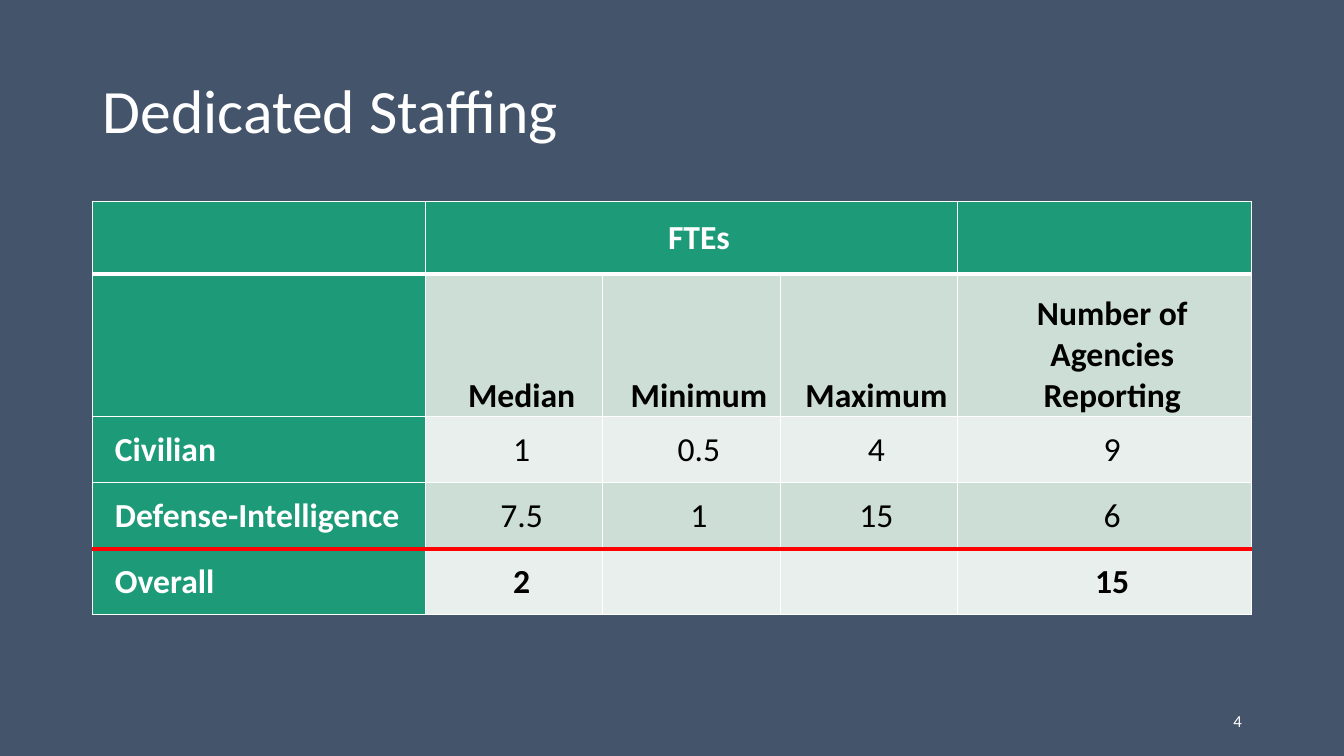
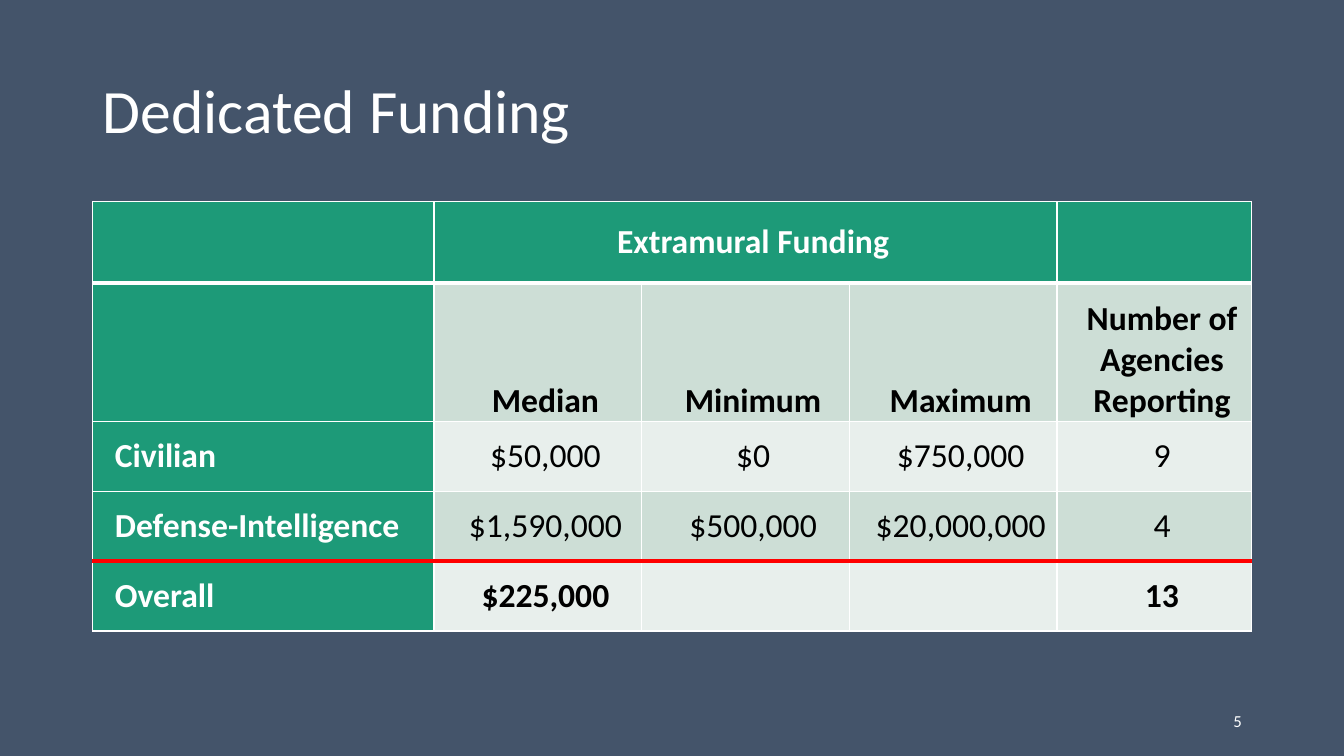
from pptx import Presentation
from pptx.dml.color import RGBColor
from pptx.enum.text import MSO_ANCHOR as Anchor, PP_ALIGN as Align
from pptx.oxml.ns import qn
from pptx.util import Inches, Pt
from lxml.etree import SubElement

FONT = "Calibri"
NAVY, GREEN, RED = "44546A", "1D9A78", "FF0000"
WHITE, BLACK = "FFFFFF", "000000"
BANDS = ["CDDED6", "E8EFEC"]

deck = Presentation()
deck.slide_width, deck.slide_height = Inches(13.33), Inches(7.5)
column, row = deck.slide_width / 100, deck.slide_height / 75
left, width = int(6.9 * column), int(86.25 * column)


def paint(target, color):
    if hasattr(target, "solid"):
        target.solid()
        target = target.fore_color
    else:
        target = target.color
    target.rgb = RGBColor.from_string(color)


def write(para, text, size, color, bold=False, align=Align.LEFT):
    para.alignment = align
    span = para.add_run()
    span.text = text
    span.font.name, span.font.size, span.font.bold = FONT, Pt(size), bold
    paint(span.font, color)


paint(deck.slide_master.background.fill, NAVY)
layout = deck.slide_layouts.get_by_name("Title Only")
title = layout.placeholders[0]
title.left, title.top = left, int(4 * row)
title.width, title.height = width, int(14.5 * row)
title.text_frame.vertical_anchor = Anchor.MIDDLE

labels = ["", "Median", "Minimum", "Maximum", "Number of\nAgencies\nReporting"]
pages = [
    {
        "title": "Dedicated Staffing",
        "number": "4",
        "columns": [24.75, 13.2, 13.2, 13.2, 21.9],
        "rows": [7.15, 14.2, 6.55, 6.55, 6.55],
        "cells": [
            ["", "FTEs", "", "", ""],
            labels,
            ["Civilian", "1", "0.5", "4", "9"],
            ["Defense-Intelligence", "7.5", "1", "15", "6"],
            ["Overall", "2", "", "", "15"],
        ],
    },
    {
        "title": "Dedicated Funding",
        "number": "5",
        "columns": [25.4, 15.45, 15.45, 15.45, 14.5],
        "rows": [8.1, 13.7, 6.94, 6.94, 6.94],
        "cells": [
            ["", "Extramural Funding", "", "", ""],
            labels,
            ["Civilian", "$50,000", "$0", "$750,000", "9"],
            ["Defense-Intelligence", "$1,590,000", "$500,000", "$20,000,000", "4"],
            ["Overall", "$225,000", "", "", "13"],
        ],
    },
]

thin = (WHITE, 1)
rules = {0: (WHITE, 3), 3: (RED, 3)}

for content in pages:
    page = deck.slides.add_slide(layout)
    para = page.shapes.title.text_frame.paragraphs[0]
    para.line_spacing = 0.9
    write(para, content["title"], 44, WHITE)

    box = page.shapes.add_textbox(
        int(70.65 * column), int(69.5 * row), int(22.5 * column), int(4 * row)
    )
    box.text_frame.word_wrap = True
    box.text_frame.vertical_anchor = Anchor.MIDDLE
    write(box.text_frame.paragraphs[0], content["number"], 12, WHITE, align=Align.RIGHT)

    table = page.shapes.add_table(
        len(content["rows"]), len(content["columns"]),
        left, int(20 * row), width, int(sum(content["rows"]) * row),
    ).table
    table.horz_banding = False
    for line, share in zip(table.columns, content["columns"]):
        line.width = int(share * column)
    for line, share in zip(table.rows, content["rows"]):
        line.height = int(share * row)
    table.cell(0, 1).merge(table.cell(0, 3))

    for r, texts in enumerate(content["cells"]):
        for c, text in enumerate(texts):
            cell = table.cell(r, c)
            green = r == 0 or c == 0
            cell.margin_left = cell.margin_right = Inches(0.07)
            cell.margin_top = cell.margin_bottom = 0
            cell.vertical_anchor = Anchor.BOTTOM if r == 1 else Anchor.MIDDLE

            properties = cell._tc.get_or_add_tcPr()
            edges = {"L": thin, "R": thin,
                     "T": rules.get(r - 1, thin), "B": rules.get(r, thin)}
            for side, (color, points) in edges.items():
                edge = SubElement(properties, qn(f"a:ln{side}"), w=str(Pt(points)))
                fill = SubElement(edge, qn("a:solidFill"))
                SubElement(fill, qn("a:srgbClr"), val=color)
            paint(cell.fill, GREEN if green else BANDS[(r + 1) % 2])

            if not text:
                continue
            frame = cell.text_frame
            for i, part in enumerate(text.split("\n")):
                para = frame.add_paragraph() if i else frame.paragraphs[0]
                para.space_after = Pt(0 if r == 1 else 6)
                indent = para._p.get_or_add_pPr()
                indent.set("marL", "0")
                indent.set("indent", str(Inches(0.15)))
                write(para, part, 24, WHITE if green else BLACK,
                      bold=green or r in (1, 4),
                      align=Align.LEFT if c == 0 else Align.CENTER)

deck.save("out.pptx")
